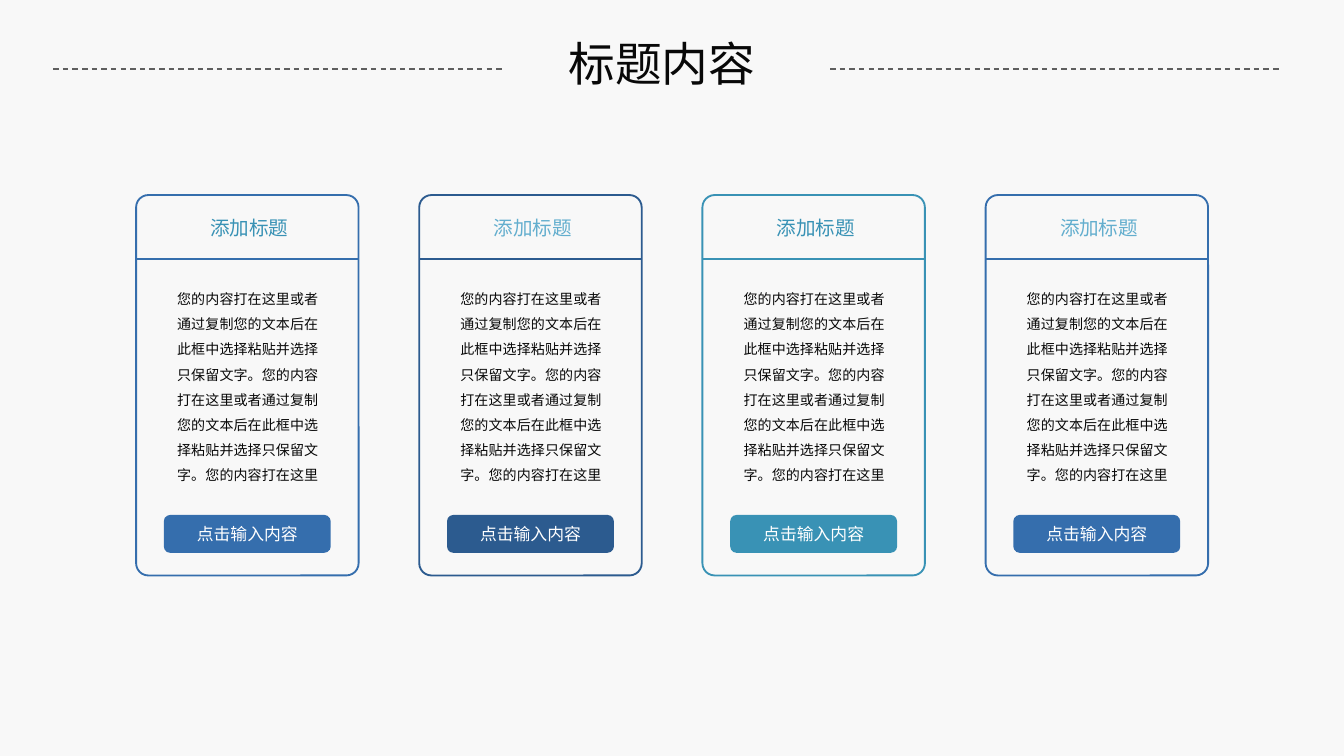
from lxml import etree
from pptx import Presentation
from pptx.dml.color import RGBColor
from pptx.enum.dml import MSO_LINE
from pptx.enum.shapes import MSO_CONNECTOR, MSO_SHAPE
from pptx.enum.text import MSO_ANCHOR, MSO_AUTO_SIZE, PP_ALIGN
from pptx.oxml.ns import qn
from pptx.util import Pt

ROUNDED = MSO_SHAPE.ROUNDED_RECTANGLE
STRAIGHT = MSO_CONNECTOR.STRAIGHT
DASH = MSO_LINE.DASH
MIDDLE = MSO_ANCHOR.MIDDLE
FIT_SHAPE = MSO_AUTO_SIZE.SHAPE_TO_FIT_TEXT
LEFT, CENTER = PP_ALIGN.LEFT, PP_ALIGN.CENTER

BACKGROUND = RGBColor(0xF8, 0xF8, 0xF8)
INK = RGBColor(0x08, 0x08, 0x08)
GRAY = RGBColor(0x5F, 0x5F, 0x5F)
WHITE = RGBColor(0xFF, 0xFF, 0xFF)
BLUE = RGBColor(0x35, 0x6E, 0xAD)
NAVY = RGBColor(0x2C, 0x5B, 0x8F)
TEAL = RGBColor(0x39, 0x92, 0xB5)
SKY = RGBColor(0x63, 0xAE, 0xCE)

SENTENCE = "您的内容打在这里或者通过复制您的文本后在此框中选择粘贴并选择只保留文字。"
BODY = SENTENCE * 2 + "您的内容打在这里"

CARD_COLORS = [(BLUE, TEAL), (NAVY, SKY), (TEAL, TEAL), (BLUE, SKY)]
CARD_LEFT, CARD_TOP = 72.9, 104.5
CARD_WIDTH, CARD_HEIGHT = 119.2, 203.8
CARD_PITCH = 151.7


class SlideBuilder:
    font_name = "Noto Sans CJK SC"

    def __init__(self, slide):
        self.slide = slide

    def fill_text(self, frame, text, size, color, align=LEFT, spacing=None):
        paragraph = frame.paragraphs[0]
        paragraph.alignment = align
        if spacing:
            paragraph.line_spacing = spacing
        run = paragraph.add_run()
        run.text = text
        run.font.color.rgb = color
        for name, value in {"size": Pt(size), "name": self.font_name}.items():
            setattr(run.font, name, value)
        east_asian = etree.SubElement(run.font._element, qn("a:ea"))
        east_asian.set("typeface", self.font_name)

    def text(self, box, text, size, color, align=LEFT, spacing=None,
             wrap=True, inset=(7.2, 3.6)):
        frame = self.slide.shapes.add_textbox(*map(Pt, box)).text_frame
        side, end = map(Pt, inset)
        settings = {
            "word_wrap": wrap, "auto_size": FIT_SHAPE,
            "margin_left": side, "margin_right": side,
            "margin_top": end, "margin_bottom": end,
        }
        for name, value in settings.items():
            setattr(frame, name, value)
        self.fill_text(frame, text, size, color, align, spacing)

    def rule(self, left, right, y, color, dash=None):
        line = self.slide.shapes.add_connector(
            STRAIGHT, Pt(left), Pt(y), Pt(right), Pt(y))
        line.line.color.rgb = color
        for name, value in {"width": Pt(0.75), "dash_style": dash}.items():
            setattr(line.line, name, value)
        etree.SubElement(line._element.spPr, qn("a:effectLst"))

    def rounded(self, box):
        shape = self.slide.shapes.add_shape(ROUNDED, *map(Pt, box))
        shape.shadow.inherit = False
        return shape

    def frame(self, box, color):
        shape = self.rounded(box)
        shape.adjustments[0] = 0.055
        shape.fill.background()
        shape.line.color.rgb = color
        shape.line.width = Pt(1)

    def button(self, box, text, color):
        shape = self.rounded(box)
        shape.fill.solid()
        shape.fill.fore_color.rgb = color
        shape.line.fill.background()
        shape.text_frame.vertical_anchor = MIDDLE
        self.fill_text(shape.text_frame, text, 9, WHITE, CENTER)

    def card(self, left, color, heading_color):
        self.frame((left, CARD_TOP, CARD_WIDTH, CARD_HEIGHT), color)
        self.rule(left, left + CARD_WIDTH, 138.8, color)
        self.text((left + 32.8, 112.3, 57, 20), "添加标题", 10.5,
                  heading_color, wrap=False)
        self.text((left + 16.6, 148.3, 90, 114.5), BODY, 7.5, INK,
                  spacing=1.5, inset=(5.4, 2.7))
        self.button((left + 14.9, 275.9, 89.4, 20.3), "点击输入内容", color)


def main():
    presentation = Presentation()
    presentation.slide_width, presentation.slide_height = Pt(720), Pt(405)
    slide = presentation.slides.add_slide(presentation.slide_layouts[6])
    slide.background.fill.solid()
    slide.background.fill.fore_color.rgb = BACKGROUND

    builder = SlideBuilder(slide)
    builder.text((292.3, 15.1, 124.6, 37.4), "标题内容", 25, INK, CENTER)
    for left in (444.7, 28.5):
        builder.rule(left, left + 240.6, 36.9, GRAY, DASH)
    for index, (color, heading_color) in enumerate(CARD_COLORS):
        builder.card(CARD_LEFT + index * CARD_PITCH, color, heading_color)

    presentation.save("out.pptx")


if __name__ == "__main__":
    main()
